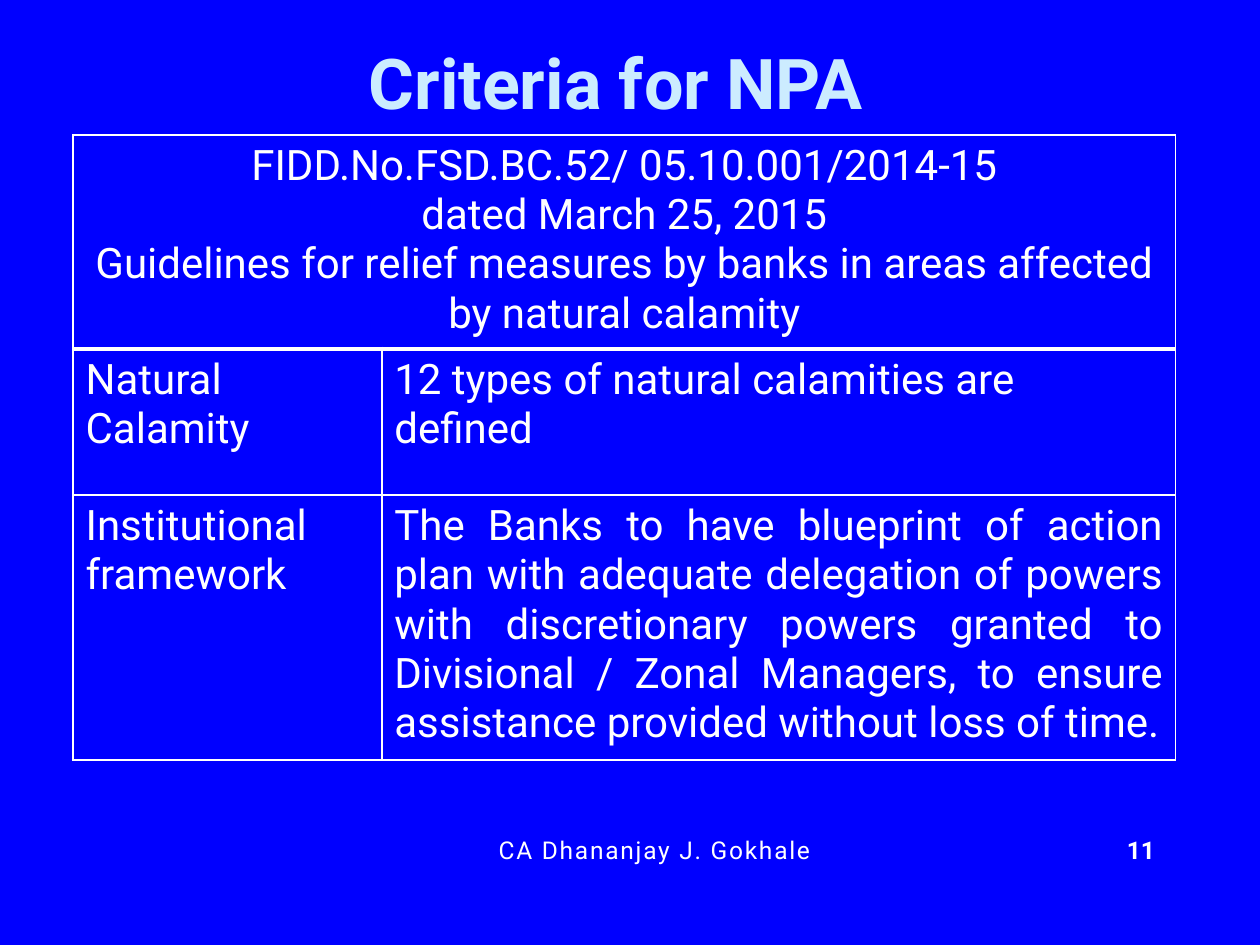
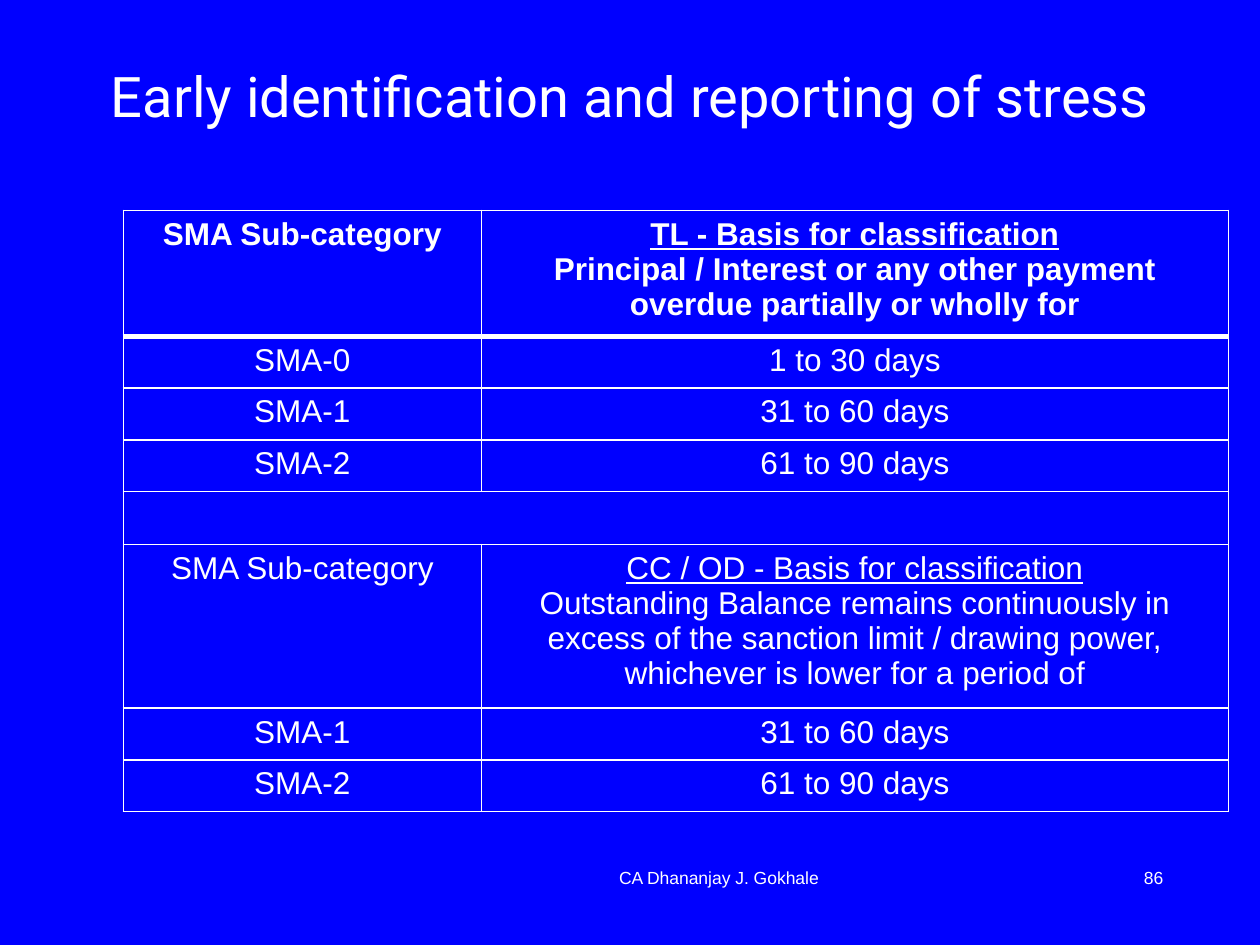
from dataclasses import dataclass

from lxml import etree
from pptx import Presentation
from pptx import util as u
from pptx.dml import color
from pptx.enum import text
from pptx.oxml import ns

BLUE = "0000FF"
WHITE = "FFFFFF"
PALE_BLUE = "CCECFF"
AUTHOR = "CA Dhananjay J. Gokhale"
LEFT = text.PP_ALIGN.LEFT
CENTER = text.PP_ALIGN.CENTER
RIGHT = text.PP_ALIGN.RIGHT
JUSTIFY = text.PP_ALIGN.JUSTIFY


@dataclass
class Style:
    size: float
    font: str
    color: str = WHITE
    bold: bool = False
    spacing: int = 0


@dataclass
class Entry:
    words: str
    align: int = CENTER
    bold: bool = False
    underline_first: bool = False


def rgb(value):
    return color.RGBColor.from_string(value)


def write(frame, words, style, align, underline_first=False):
    for index, line in enumerate(words.split("\n")):
        paragraph = frame.paragraphs[0] if index == 0 else frame.add_paragraph()
        paragraph.text = line
        paragraph.alignment = align
        font = paragraph.font
        font.size = u.Pt(style.size)
        font.name = style.font
        font.bold = style.bold
        font.underline = underline_first and index == 0
        font.color.rgb = rgb(style.color)
        if style.spacing:
            for run in paragraph.runs:
                run._r.get_or_add_rPr().set("spc", str(style.spacing * 100))


def add_slide(presentation):
    slide = presentation.slides.add_slide(presentation.slide_layouts[6])
    slide.background.fill.solid()
    slide.background.fill.fore_color.rgb = rgb(BLUE)
    return slide


def add_text(slide, box, words, style, align=CENTER, anchor=text.MSO_ANCHOR.TOP):
    shape = slide.shapes.add_textbox(*(u.Inches(length) for length in box))
    shape.text_frame.word_wrap = True
    shape.text_frame.vertical_anchor = anchor
    write(shape.text_frame, words, style, align)


def add_title(slide, box, words, style):
    add_text(slide, box, words, style, anchor=text.MSO_ANCHOR.MIDDLE)


def add_footer(slide, author_box, author_style, number_box, number, number_style, number_align):
    add_text(slide, author_box, AUTHOR, author_style)
    add_text(slide, number_box, number, number_style, number_align)


def set_borders(cell, widths):
    properties = cell._tc.get_or_add_tcPr()
    for side, width in widths.items():
        line = etree.SubElement(properties, ns.qn(f"a:ln{side}"), w=str(u.Pt(width)))
        fill = etree.SubElement(line, ns.qn("a:solidFill"))
        etree.SubElement(fill, ns.qn("a:srgbClr"), val=WHITE)


def add_ruled_table(slide, left, top, widths, heights, rows, size, font):
    frame = slide.shapes.add_table(
        len(rows), len(widths), u.Inches(left), u.Inches(top),
        u.Inches(sum(widths)), u.Inches(sum(heights)))
    table = frame.table
    table.first_row = False
    table.horz_banding = False
    for column, width in zip(table.columns, widths):
        column.width = u.Inches(width)
    for row, height in zip(table.rows, heights):
        row.height = u.Inches(height)
    for row_index, entries in enumerate(rows):
        for column_index, entry in enumerate(entries):
            cell = table.cell(row_index, column_index)
            set_borders(cell, {"L": 1, "R": 1,
                               "T": 3 if row_index == 1 else 1,
                               "B": 3 if row_index == 0 else 1})
            cell.fill.background()
            if entry is None:
                table.cell(row_index, column_index - 1).merge(cell)
            else:
                write(cell.text_frame, entry.words, Style(size, font, bold=entry.bold),
                      entry.align, entry.underline_first)


def build_criteria(presentation):
    slide = add_slide(presentation)
    add_title(slide, (0.51, 0.29, 8.75, 0.71), "Criteria for NPA",
              Style(40, "Roboto", PALE_BLUE, bold=True))
    rows = [
        [Entry("FIDD.No.FSD.BC.52/ 05.10.001/2014-15\ndated March 25, 2015\n"
               "Guidelines for relief measures by banks in areas affected by natural calamity"),
         None],
        [Entry("Natural Calamity", JUSTIFY),
         Entry("12 types of natural calamities are defined", LEFT)],
        [Entry("Institutional framework", JUSTIFY),
         Entry("The Banks to have blueprint of action plan with adequate delegation of powers "
               "with discretionary powers granted to Divisional / Zonal Managers, to ensure "
               "assistance provided without loss of time.", JUSTIFY)],
    ]
    add_ruled_table(slide, 0.58, 1.07, [2.45, 6.3], [1.7, 1.16, 2.06], rows, 24, "Roboto")
    add_footer(slide, (1.61, 6.58, 7.17, 0.38), Style(14, "Roboto", spacing=1),
               (8.78, 6.58, 0.55, 0.42), "11", Style(14, "Roboto", bold=True), CENTER)


def build_stress_reporting(presentation):
    slide = add_slide(presentation)
    add_title(slide, (0.67, 0.44, 8.67, 0.63),
              "Early identification and reporting of stress", Style(32, "Roboto"))
    periods = [("SMA-0", "1 to 30 days"), ("SMA-1", "31 to 60 days"), ("SMA-2", "61 to 90 days")]
    period_rows = [[Entry(category), Entry(days)] for category, days in periods]
    rows = [
        [Entry("SMA Sub-category", bold=True),
         Entry("TL - Basis for classification\nPrincipal / Interest or any other payment "
               "overdue partially or wholly for", bold=True, underline_first=True)],
        *period_rows,
        [Entry(""), None],
        [Entry("SMA Sub-category"),
         Entry("CC / OD - Basis for classification\nOutstanding Balance remains continuously in "
               "excess of the sanction limit / drawing power, whichever is lower for a period of",
               underline_first=True)],
        *period_rows[1:],
    ]
    heights = [0.93, 0.41, 0.41, 0.41, 0.42, 1.22, 0.41, 0.41]
    add_ruled_table(slide, 0.98, 1.67, [2.84, 5.93], heights, rows, 18, "Arial")
    footer_style = Style(10, "Arial")
    add_footer(slide, (4.33, 6.83, 2.75, 0.5), footer_style,
               (7.25, 6.83, 2.08, 0.5), "86", footer_style, RIGHT)


def main():
    presentation = Presentation()
    presentation.slide_width = u.Inches(10)
    presentation.slide_height = u.Inches(7.5)
    build_criteria(presentation)
    build_stress_reporting(presentation)
    presentation.save("out.pptx")


if __name__ == "__main__":
    main()
